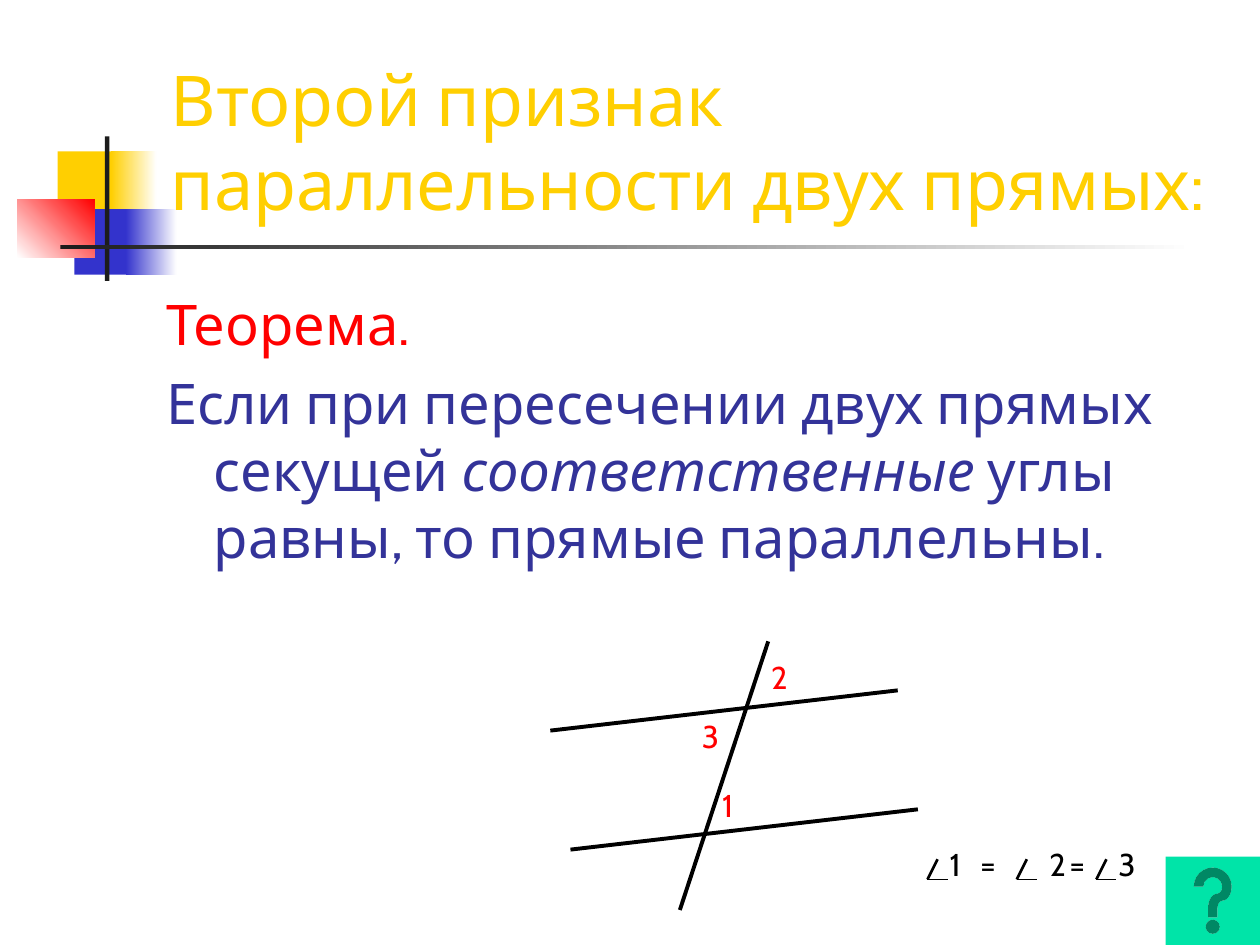
"""Build a slide on the second test for parallel lines."""
from lxml import etree
from pptx import Presentation
from pptx.dml.color import RGBColor
from pptx.enum.shapes import MSO_CONNECTOR, MSO_SHAPE
from pptx.enum.text import MSO_ANCHOR
from pptx.oxml.ns import qn
from pptx.util import Pt

RECT = MSO_SHAPE.RECTANGLE
HELP = MSO_SHAPE.ACTION_BUTTON_HELP
LINE = MSO_CONNECTOR.STRAIGHT
TOP, BOTTOM = MSO_ANCHOR.TOP, MSO_ANCHOR.BOTTOM

WHITE = RGBColor(0xFF, 0xFF, 0xFF)
BLACK = RGBColor(0, 0, 0)
DARK = RGBColor(0x1C, 0x1C, 0x1C)
GOLD = RGBColor(0xFF, 0xCF, 0x01)
BLUE = RGBColor(0x33, 0x33, 0xCC)
NAVY = RGBColor(0x33, 0x33, 0x99)
RED = RGBColor(0xFF, 0, 0)
MINT = RGBColor(0, 0xE4, 0xA8)
FONT = "Cabin"

TITLE = [[("Второй признак параллельности двух прямых:", GOLD, False)]]
BODY = [
    [("Теорема.", RED, False)],
    [("Если при пересечении двух прямых секущей ", NAVY, False),
     ("соответственные ", NAVY, True),
     ("углы равны, то прямые параллельны.", NAVY, False)],
]
DECOR = [
    ((33, 86.5, 35, 37.5), (GOLD,), 0),
    ((63.5, 86.5, 26, 37.5), (GOLD, WHITE), 0),
    ((42.5, 119.5, 33, 37.5), (BLUE,), 0),
    ((72, 119.5, 29, 37.5), (BLUE, WHITE), 0),
    ((10, 113.75, 44, 33.5), (WHITE, RED), 45),
    ((60, 78, 2.5, 82.5), (DARK,), 0),
    ((34.5, 140, 648, 2.5), (DARK, WHITE), 0),
]
LINES = [(314.5, 417.5, 513, 394.5), (326, 485.5, 524.5, 462.5),
         (439, 366.5, 388.5, 520)]
ANGLES = [("1", 405.5, 445.5, 40), ("2", 433.5, 372.5, 62),
          ("3", 394, 406, 45)]
PROOF = [("1", 535.5, 23), ("=", 553, 23), ("2", 592.5, 23),
         ("=", 604, 27), ("3", 632, 28)]
SIGNS = [530, 581, 626.5]
ROW, BASE, RISE, FOOT = 479.5, 502.5, 11.5, 11.5

deck = Presentation()
deck.slide_width, deck.slide_height = Pt(720), Pt(540)
slide = deck.slides.add_slide(deck.slide_layouts[6])
shapes = slide.shapes


def block(kind, box, tones, turn=0):
    shape = shapes.add_shape(kind, *map(Pt, box))
    shape.shadow.inherit = False
    shape.line.fill.background()
    if len(tones) == 1:
        shape.fill.solid()
        shape.fill.fore_color.rgb = tones[0]
        return
    shape.fill.gradient()
    shape.fill.gradient_angle = turn
    for stop, tone in zip(shape.fill.gradient_stops, tones):
        stop.color.rgb = tone


def stroke(ends, width):
    line = shapes.add_connector(LINE, *map(Pt, ends))
    line.line.color.rgb = BLACK
    line.line.width = Pt(width)
    etree.SubElement(line._element.spPr, qn("a:effectLst"))


def shade(run):
    list_ = etree.SubElement(run.font._element, qn("a:effectLst"))
    cast = etree.SubElement(list_, qn("a:outerShdw"),
                            dist="35921", dir="2700000", algn="ctr")
    etree.SubElement(cast, qn("a:srgbClr"), val=str(DARK))


def write(box, paras, size, anchor=TOP, hang=0, gap=0, cast=False):
    frame = shapes.add_textbox(*map(Pt, box)).text_frame
    frame.word_wrap = True
    frame.vertical_anchor = anchor
    for i, runs in enumerate(paras):
        para = frame.add_paragraph() if i else frame.paragraphs[0]
        para.space_before = Pt(gap if i else 0)
        if hang:
            props = para._p.get_or_add_pPr()
            props.set("marL", str(Pt(hang)))
            props.set("indent", str(-Pt(hang)))
        for text, tone, slant in runs:
            run = para.add_run()
            run.text = text
            run.font.size = Pt(size)
            run.font.italic = slant
            run.font.color.rgb = tone
            if cast:
                shade(run)
            run.font.name = FONT


for box, tones, turn in DECOR:
    block(RECT, box, tones, turn)
write((90.5, 16.5, 613.5, 115.5), TITLE, 40, BOTTOM, cast=True)
write((88, 162, 612, 295), BODY, 32, hang=27, gap=6.4)
for ends in LINES:
    stroke(ends, 2.25)
for text, x, y, width in ANGLES:
    write((x, y, width, 29), [[(text, RED, False)]], 18)
for text, x, width in PROOF:
    write((x, ROW, width, 29), [[(text, BLACK, False)]], 18)
for x in SIGNS:
    stroke((x + FOOT / 2, BASE - RISE, x, BASE), 1.5)
    stroke((x, BASE, x + FOOT, BASE), 1)
block(HELP, (666, 489.5, 54, 50.5), (MINT,))
deck.save("out.pptx")
